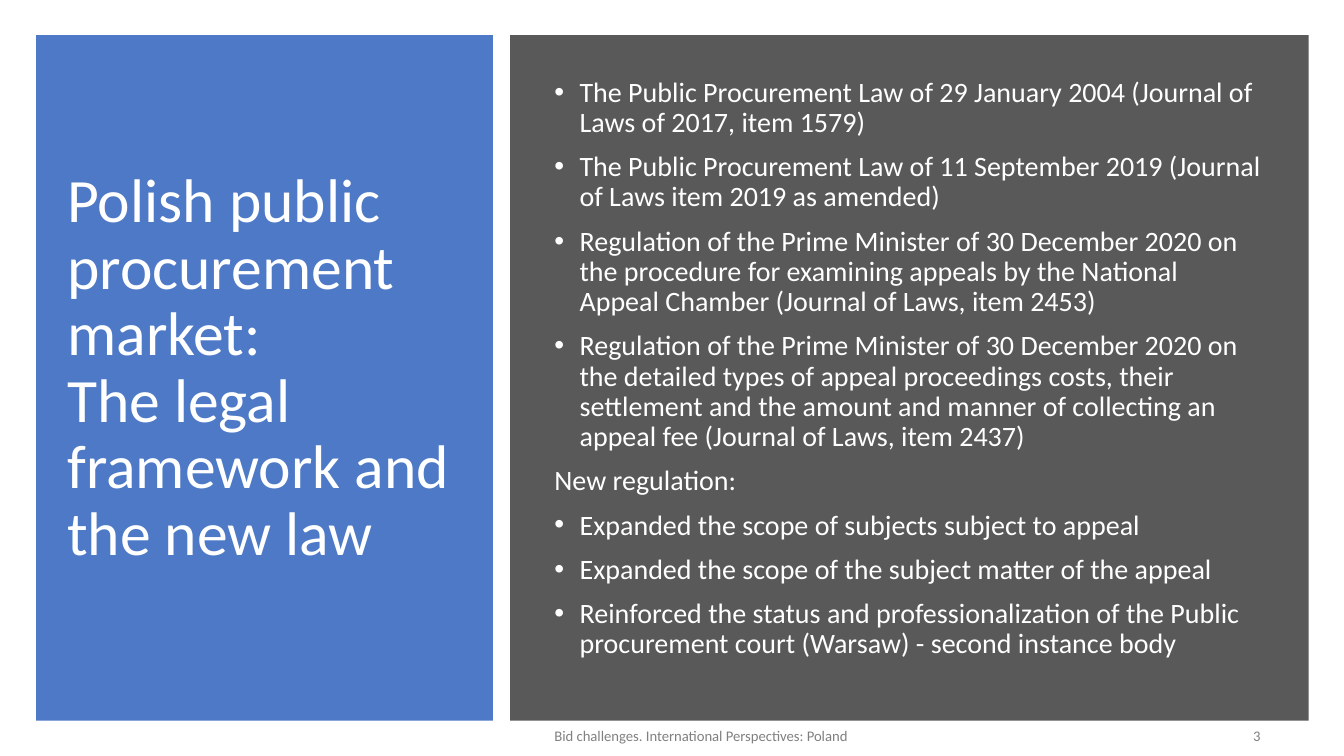
"""Build the slide on the legal framework of Polish public procurement."""
from lxml import etree
from pptx import Presentation
from pptx.dml.color import RGBColor
from pptx.enum.shapes import MSO_SHAPE as Shape
from pptx.enum.text import MSO_ANCHOR as Anchor, PP_ALIGN as Align
from pptx.oxml.ns import qn
from pptx.util import Inches, Pt

BLUE = RGBColor(0x44, 0x72, 0xC4)
DARK_GRAY = RGBColor(0x59, 0x59, 0x59)
FOOTER_GRAY = RGBColor(0x80, 0x80, 0x80)
WHITE = RGBColor(0xFF, 0xFF, 0xFF)

TITLE_LINES = ["Polish public procurement market: ", "The legal framework and the new law"]
BODY = [
    ("The Public Procurement Law of 29 January 2004 (Journal of Laws of 2017, item 1579)", True),
    ("The Public Procurement Law of 11 September 2019 (Journal of Laws item 2019 as amended)", True),
    ("Regulation of the Prime Minister of 30 December 2020 on the procedure for examining "
     "appeals by the National Appeal Chamber (Journal of Laws, item 2453)", True),
    ("Regulation of the Prime Minister of 30 December 2020 on the detailed types of appeal "
     "proceedings costs, their settlement and the amount and manner of collecting an appeal fee "
     "(Journal of Laws, item 2437)", True),
    ("New regulation:", False),
    ("Expanded the scope of subjects subject to appeal", True),
    ("Expanded the scope of the subject matter of the appeal", True),
    ("Reinforced the status and professionalization of the Public procurement court (Warsaw) "
     "- second instance body", True),
]

presentation = Presentation()
presentation.slide_width = Inches(13.33)
presentation.slide_height = Inches(7.5)
slide = presentation.slides.add_slide(presentation.slide_layouts[6])


def add_text_frame(left, top, width, height):
    text_frame = slide.shapes.add_textbox(
        Inches(left), Inches(top), Inches(width), Inches(height)).text_frame
    text_frame.word_wrap = True
    text_frame.vertical_anchor = Anchor.MIDDLE
    return text_frame


def add_run(paragraph, text, size, color):
    run = paragraph.add_run()
    run.text = text
    run.font.name = "Calibri"
    run.font.size = Pt(size)
    run.font.color.rgb = color


for left, width, color in [(0.36, 4.53, BLUE), (5.06, 7.92, DARK_GRAY)]:
    panel = slide.shapes.add_shape(
        Shape.RECTANGLE, Inches(left), Inches(0.35), Inches(width), Inches(6.8))
    panel.shadow.inherit = False
    panel.fill.solid()
    panel.fill.fore_color.rgb = color
    panel.line.fill.background()
    if color == BLUE:
        panel_color = panel.fill._xPr.find(qn("a:solidFill")).find(qn("a:srgbClr"))
        etree.SubElement(panel_color, qn("a:alpha"), val="95000")

title = add_text_frame(0.57, 0.64, 4.07, 6.04).paragraphs[0]
title.line_spacing = 0.9
add_run(title, TITLE_LINES[0], 44, WHITE)
title.add_line_break()
add_run(title, TITLE_LINES[1], 44, WHITE)

body_frame = add_text_frame(5.4, 0.64, 7.21, 6.04)
for index, (text, bulleted) in enumerate(BODY):
    paragraph = body_frame.add_paragraph() if index else body_frame.paragraphs[0]
    paragraph.line_spacing = 0.9
    if index:
        paragraph.space_before = Pt(10)
    if bulleted:
        properties = paragraph._p.get_or_add_pPr()
        properties.set("marL", str(Inches(0.25)))
        properties.set("indent", str(Inches(-0.25)))
        etree.SubElement(properties, qn("a:buFont"), typeface="Arial")
        etree.SubElement(properties, qn("a:buChar"), char="•")
    add_run(paragraph, text, 20, WHITE)

for text, left, width, alignment in [
    ("Bid challenges. International Perspectives: Poland", 5.4, 5.85, Align.LEFT),
    ("3", 11.54, 1.06, Align.RIGHT),
]:
    footer = add_text_frame(left, 7.15, width, 0.3).paragraphs[0]
    footer.alignment = alignment
    footer.space_after = Pt(6)
    add_run(footer, text, 10.5, FOOTER_GRAY)

presentation.save("out.pptx")
